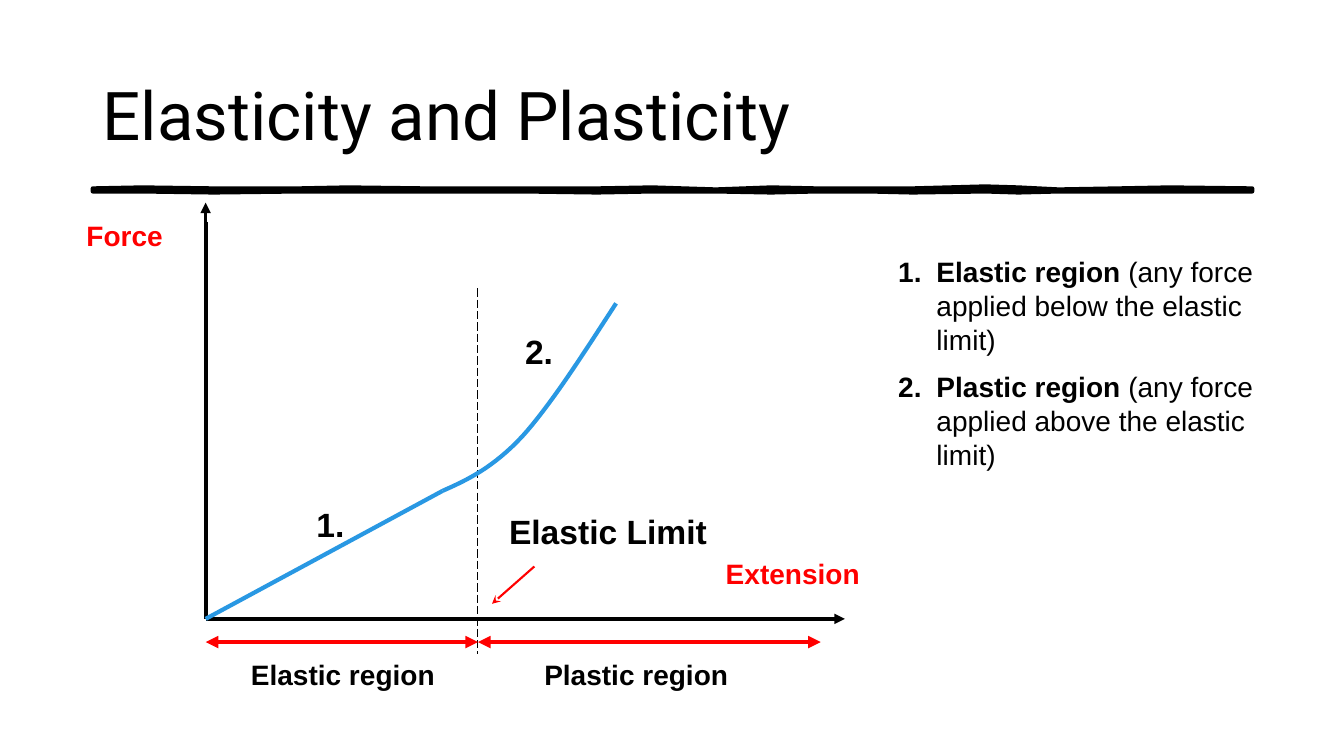
"""Build the Elasticity and Plasticity slide with its force-extension graph."""
from lxml import etree
from pptx import Presentation
from pptx.dml.color import RGBColor
from pptx.enum.dml import MSO_LINE
from pptx.enum.shapes import MSO_CONNECTOR
from pptx.enum.text import MSO_ANCHOR
from pptx.oxml.ns import qn
from pptx.util import Inches, Pt

BLACK = RGBColor(0x00, 0x00, 0x00)
RED = RGBColor(0xFF, 0x00, 0x00)
BLUE = RGBColor(0x29, 0x98, 0xE3)
STRAIGHT = MSO_CONNECTOR.STRAIGHT
LONG_DASH = MSO_LINE.LONG_DASH
MIDDLE = MSO_ANCHOR.MIDDLE

ORIGIN_X, ORIGIN_Y = 2.04, 6.14
LIMIT_X = 4.74
REGION_Y = 6.37
BEND = (4.39, 4.87)

presentation = Presentation()
presentation.slide_width = Inches(13.33)
presentation.slide_height = Inches(7.5)
slide = presentation.slides.add_slide(presentation.slide_layouts[6])


def add_text(box, runs, **formats):
    left, top, width, height = (Inches(value) for value in box)
    shape = slide.shapes.add_textbox(left, top, width, height)
    frame = shape.text_frame
    frame.word_wrap = True
    for text, bold in runs:
        run = frame.paragraphs[0].add_run()
        run.text = text
        values = {"name": "Arial", "size": Pt(20), "bold": bold} | formats
        color = values.pop("color", BLACK)
        for name, value in values.items():
            setattr(run.font, name, value)
        run.font.color.rgb = color
    return frame


def add_curve(points, width, color, closed):
    start, *rest = [(Inches(x), Inches(y)) for x, y in points]
    builder = slide.shapes.build_freeform(*start)
    builder.add_line_segments(rest, close=closed)
    shape = builder.convert_to_shape()
    shape.shadow.inherit = False
    shape.line.color.rgb = color
    shape.line.width = Pt(width)
    return shape


rule_edges = [
    (0.92, 1.87, 1.9), (1.41, 1.86, 1.9), (2.12, 1.87, 1.91),
    (2.96, 1.87, 1.9), (3.45, 1.86, 1.9), (4.22, 1.87, 1.9),
    (5.2, 1.87, 1.9), (5.92, 1.87, 1.91), (6.47, 1.86, 1.9),
    (7.1, 1.88, 1.9), (7.65, 1.86, 1.91), (8.1, 1.87, 1.9),
    (8.62, 1.87, 1.9), (9.05, 1.87, 1.91), (9.77, 1.85, 1.9),
    (10.1, 1.86, 1.91), (10.5, 1.88, 1.9), (11.09, 1.87, 1.9),
    (11.6, 1.86, 1.9), (12.42, 1.87, 1.9),
]
rule_points = [(x, top) for x, top, bottom in rule_edges]
rule_points += [(x, bottom) for x, top, bottom in reversed(rule_edges)]
title_rule = add_curve(rule_points, 3, BLACK, True)
title_rule.fill.solid()
title_rule.fill.fore_color.rgb = BLACK

title = add_text((0.92, 0.4, 11.5, 1.45), [("Elasticity and Plasticity", False)],
                 name="Roboto", size=Pt(48))
title.vertical_anchor = MIDDLE

lines = [
    ((LIMIT_X, 2.86), (LIMIT_X, 6.49), BLACK, 0.75, {}),
    ((4.88, 5.99), (5.3, 5.62), RED, 1.5, {"headEnd": "stealth"}),
    ((ORIGIN_X, 2.2), (ORIGIN_X, ORIGIN_Y), BLACK, 3, {}),
    ((ORIGIN_X, ORIGIN_Y), (8.22, ORIGIN_Y), BLACK, 3, {}),
    ((ORIGIN_X, ORIGIN_Y), BEND, BLUE, 3, {}),
    ((ORIGIN_X, 2.48), (ORIGIN_X, 2.01), BLACK, 2.5, {"tailEnd": "triangle"}),
    ((7.81, ORIGIN_Y), (8.38, ORIGIN_Y), BLACK, 2.5, {"tailEnd": "triangle"}),
    ((ORIGIN_X, REGION_Y), (LIMIT_X, REGION_Y), RED, 3,
     {"headEnd": "triangle", "tailEnd": "triangle"}),
    ((LIMIT_X, REGION_Y), (8.14, REGION_Y), RED, 3,
     {"headEnd": "triangle", "tailEnd": "triangle"}),
]
for start, end, color, width, arrowheads in lines:
    ends = [Inches(value) for value in start + end]
    connector = slide.shapes.add_connector(STRAIGHT, *ends)
    connector.line.color.rgb = color
    connector.line.width = Pt(width)
    if width < 1:
        connector.line.dash_style = LONG_DASH
    properties = connector.element.spPr
    for tag, kind in arrowheads.items():
        etree.SubElement(properties.find(qn("a:ln")), qn(f"a:{tag}"), type=kind)
    etree.SubElement(properties, qn("a:effectLst"))

controls = [BEND, (4.64, 4.76), (4.89, 4.64), (5.18, 4.33),
            (5.46, 4.02), (5.78, 3.52), (6.11, 3.01)]
STEPS = 16
curve_points = [BEND]
for first in (0, 3):
    for step in range(1, STEPS + 1):
        t = step / STEPS
        weights = ((1 - t) ** 3, 3 * t * (1 - t) ** 2, 3 * t ** 2 * (1 - t), t ** 3)
        segment = controls[first:first + 4]
        curve_points.append(tuple(
            sum(weight * point[axis] for weight, point in zip(weights, segment))
            for axis in (0, 1)))
plastic_curve = add_curve(curve_points, 3, BLUE, False)
plastic_curve.fill.background()

labels = [
    ("Elastic Limit", (4.95, 5.02, 2.21, 0.47), 24, BLACK),
    ("1.", (3.04, 4.95, 0.74, 0.47), 24, BLACK),
    ("2.", (5.11, 3.23, 0.93, 0.47), 24, BLACK),
    ("Force", (0.76, 2.12, 2, 0.44), 20, RED),
    ("Extension", (7.1, 5.47, 2.04, 0.44), 20, RED),
    ("Elastic region", (2.39, 6.47, 2.04, 0.44), 20, BLACK),
    ("Plastic region", (5.3, 6.47, 2.04, 0.44), 20, BLACK),
]
for text, box, size, color in labels:
    add_text(box, [(text, True)], size=Pt(size), color=color)

regions = [("Elastic region", " (any force applied below the elastic limit)"),
           ("Plastic region", " (any force applied above the elastic limit)")]
region_list = slide.shapes.add_textbox(Inches(8.81), Inches(2.48), Inches(3.78), Inches(2.29))
region_list.text_frame.word_wrap = True
for index, region in enumerate(regions):
    frame = region_list.text_frame
    paragraph = frame.add_paragraph() if index else frame.paragraphs[0]
    properties = paragraph._p.get_or_add_pPr()
    properties.set("marL", str(Inches(0.38)))
    properties.set("indent", str(Inches(-0.38)))
    etree.SubElement(properties, qn("a:buFont"), typeface="Arial")
    etree.SubElement(properties, qn("a:buAutoNum"), type="arabicPeriod")
    if index:
        paragraph.space_before = Pt(10)
    for text, bold in zip(region, (True, False)):
        run = paragraph.add_run()
        run.text = text
        for name, value in {"name": "Arial", "size": Pt(20), "bold": bold}.items():
            setattr(run.font, name, value)
        run.font.color.rgb = BLACK

presentation.save("out.pptx")
